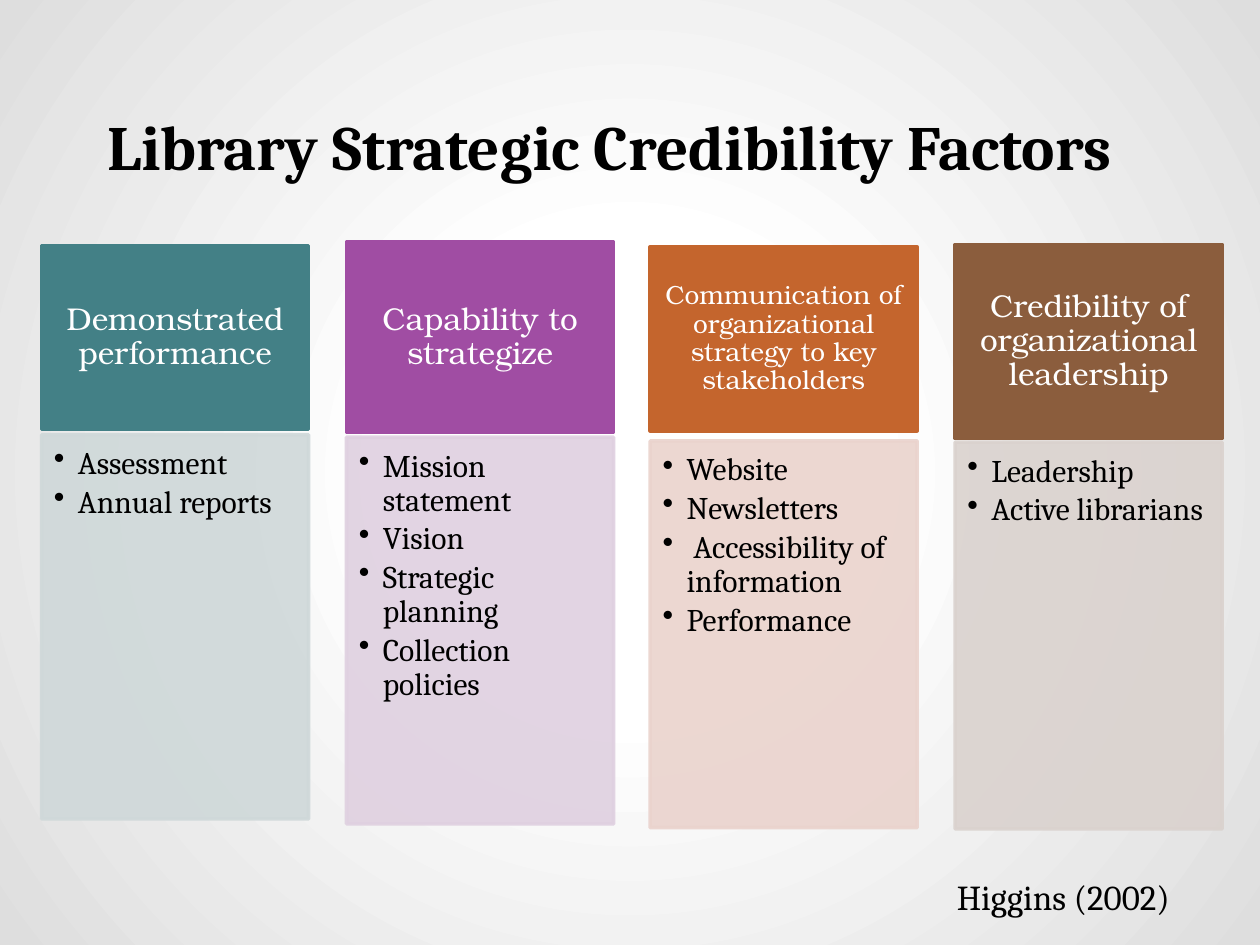
from dataclasses import dataclass

from lxml import etree
from pptx import Presentation
from pptx.dml.color import RGBColor
from pptx.enum.shapes import MSO_SHAPE
from pptx.enum.text import MSO_ANCHOR, MSO_AUTO_SIZE, PP_ALIGN
from pptx.oxml.ns import qn
from pptx.util import Inches, Pt

RECTANGLE = MSO_SHAPE.RECTANGLE
TOP, MIDDLE, BOTTOM = MSO_ANCHOR.TOP, MSO_ANCHOR.MIDDLE, MSO_ANCHOR.BOTTOM
LEFT, CENTER = PP_ALIGN.LEFT, PP_ALIGN.CENTER
TITLE_ONLY = 5


@dataclass(frozen=True)
class Theme:
    serif: str = "Cambria"
    heading: str = "TeX Gyre Bonum"
    black: str = "000000"
    white: str = "FFFFFF"
    edge: str = "DEDEDE"
    title_size: int = 36
    body_size: int = 18
    small_size: int = 15
    source_size: int = 20


theme = Theme()


def write(frame, lines, font=theme.serif, size=theme.body_size, color=theme.black,
          bold=False, align=LEFT, anchor=TOP, insets=(0.1, 0.05, 0.1, 0.05),
          spacing=None, after=0, margin=0, indent=0, bullet=None):
    """Fill a text frame with one paragraph per line; insets and indents in inches."""
    frame.word_wrap = True
    frame.vertical_anchor = anchor
    (frame.margin_left, frame.margin_top,
     frame.margin_right, frame.margin_bottom) = map(Inches, insets)
    for index, line in enumerate(lines):
        para = frame.paragraphs[0] if index == 0 else frame.add_paragraph()
        para.alignment = align
        para.line_spacing = spacing
        para.space_before, para.space_after = Pt(0), Pt(after)
        properties = para._p.get_or_add_pPr()
        properties.set("marL", str(Inches(margin)))
        properties.set("indent", str(Inches(indent)))
        if bullet:
            etree.SubElement(properties, qn("a:buChar")).set("char", bullet)
        span = para.add_run()
        span.text = line
        span.font.name, span.font.size, span.font.bold = font, Pt(size), bold
        span.font.color.rgb = RGBColor.from_string(color)


def add_panel(page, left, top, width, height, color, opacity=100):
    box = page.shapes.add_shape(RECTANGLE, *map(Inches, (left, top, width, height)))
    box.shadow.inherit = False
    box.fill.solid()
    box.fill.fore_color.rgb = RGBColor.from_string(color)
    box.line.color.rgb = RGBColor.from_string(color)
    box.line.width = Pt(2)
    if opacity < 100:
        for tone in box._element.spPr.iter(qn("a:srgbClr")):
            etree.SubElement(tone, qn("a:alpha")).set("val", str(opacity * 1000))
    return box


deck = Presentation()
deck.slide_width, deck.slide_height = Inches(10), Inches(7.5)
page = deck.slides.add_slide(deck.slide_layouts[TITLE_ONLY])

# Radial background, white in the middle
page.background.fill.gradient()
gradient = page.element.find(".//" + qn("a:gradFill"))
for child in list(gradient):
    gradient.remove(child)
stops = etree.SubElement(gradient, qn("a:gsLst"))
for position, color in ((0, theme.white), (30, theme.white), (100, theme.edge)):
    stop = etree.SubElement(stops, qn("a:gs"), pos=str(position * 1000))
    etree.SubElement(stop, qn("a:srgbClr"), val=color)
circle = etree.SubElement(gradient, qn("a:path"), path="circle")
etree.SubElement(circle, qn("a:fillToRect"), l="50000", t="50000", r="50000", b="50000")

title = page.shapes.title
title.left, title.top, title.width, title.height = map(Inches, (0.5, 0.74, 9, 0.81))
write(title.text_frame, ["Library Strategic Credibility Factors"], size=theme.title_size,
      bold=True, anchor=BOTTOM, insets=(0.1, 0.1, 0.1, 0.1), indent=0.25)

# Heading, size, dark and light colour, heading top and height, list top and height, items
columns = [
    ("Demonstrated performance", theme.body_size, "438086", "CFD8D9",
     1.95, 1.46, 3.45, 3.05, ["Assessment", "Annual reports"]),
    ("Capability to strategize", theme.body_size, "A04DA3", "DFD0E0",
     1.92, 1.51, 3.47, 3.07,
     ["Mission statement", "Vision", "Strategic planning", "Collection policies"]),
    ("Communication of organizational strategy to key stakeholders",
     theme.small_size, "C4652D", "EAD3CD", 1.96, 1.46, 3.5, 3.07,
     ["Website", "Newsletters", " Accessibility of information", "Performance"]),
    ("Credibility of organizational leadership", theme.body_size, "8B5D3D", "DAD2CE",
     1.94, 1.54, 3.51, 3.07, ["Leadership", "Active librarians"]),
]
first_left, column_width, column_step = 0.33, 2.12, 2.417

for index, (heading, size, dark, light, head_top, head_height,
            list_top, list_height, items) in enumerate(columns):
    left = round(first_left + index * column_step, 2)
    head = add_panel(page, left, head_top, column_width, head_height, dark)
    side, edge = (0.14, 0.08) if size == theme.body_size else (0.12, 0.07)
    write(head.text_frame, [heading], font=theme.heading, size=size, color=theme.white,
          align=CENTER, anchor=MIDDLE, insets=(side, edge, side, edge), spacing=0.9)
    body = add_panel(page, left, list_top, column_width, list_height, light, opacity=90)
    write(body.text_frame, items, insets=(0.1, 0.1, 0.14, 0.16), spacing=0.9,
          after=2.7, margin=0.19, indent=-0.19, bullet="•")

source = page.shapes.add_textbox(*map(Inches, (6.88, 6.9, 3.12, 0.44)))
write(source.text_frame, ["Higgins (2002)"], size=theme.source_size, align=CENTER)
source.text_frame.auto_size = MSO_AUTO_SIZE.SHAPE_TO_FIT_TEXT

deck.save("out.pptx")
